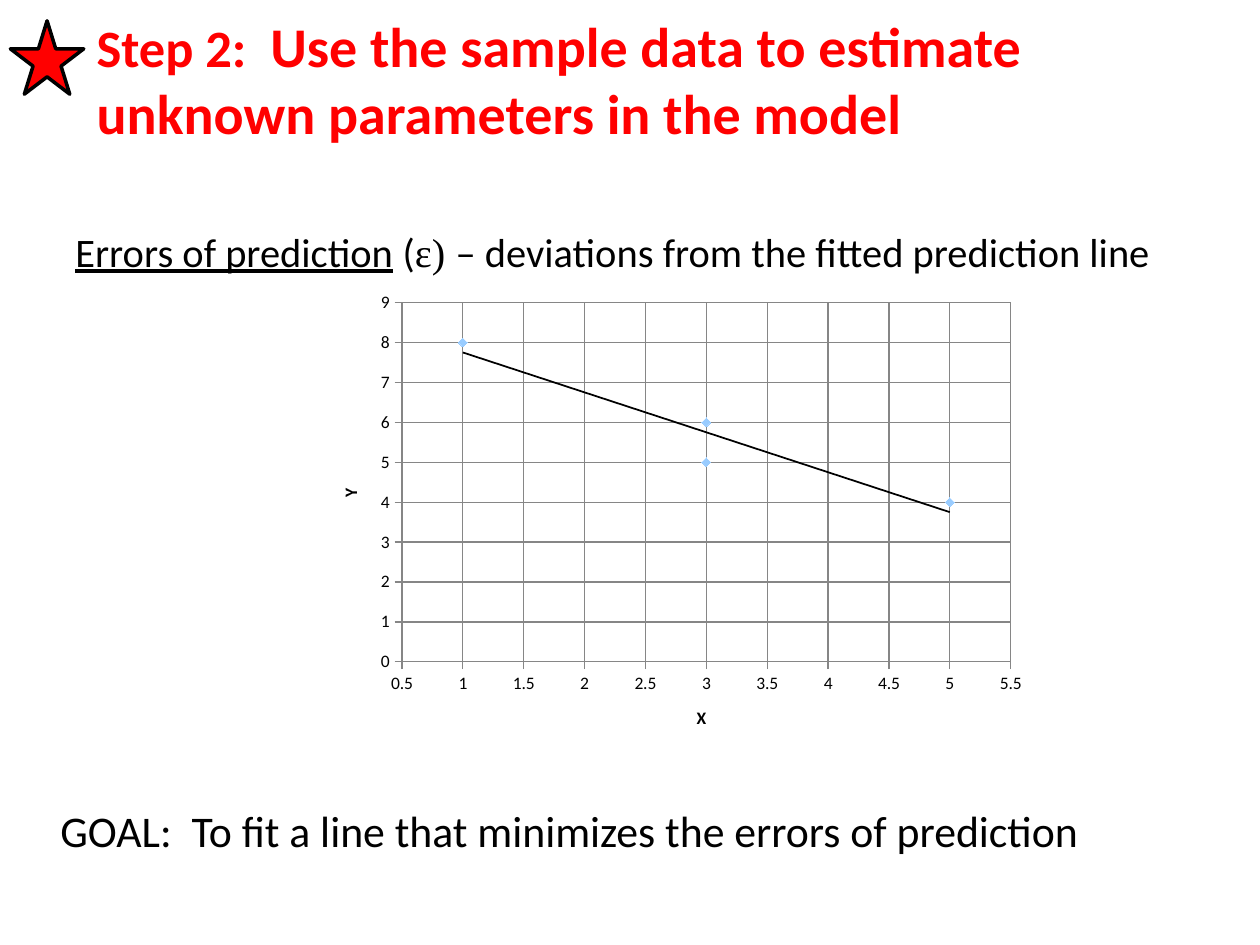
from lxml import etree
from pptx import Presentation
from pptx.chart.data import XyChartData
from pptx.dml.color import RGBColor
from pptx.enum import chart as ch, shapes, text
from pptx.oxml import parse_xml
from pptx.oxml.ns import nsdecls, qn
from pptx.util import Cm, Pt

RED = RGBColor(0xFF, 0, 0)
BLACK = RGBColor(0, 0, 0)
GRID_GREY = RGBColor(0x86, 0x86, 0x86)
POINT_BLUE = RGBColor(0x99, 0xCC, 0xFF)
FONT = "Calibri"
POINTS = [(3, 5), (1, 8), (3, 6), (5, 4)]


def style_font(font, size, color=BLACK, bold=False, name=FONT):
    font.name, font.size, font.bold = name, Pt(size), bold
    font.color.rgb = color


def add_text(slide, box, pieces, anchor=text.MSO_ANCHOR.TOP):
    """Add one paragraph; each piece is (wording, font options)."""
    frame = slide.shapes.add_textbox(*map(Cm, box)).text_frame
    frame.word_wrap = True
    frame.vertical_anchor = anchor
    paragraph = frame.paragraphs[0]
    for wording, options in pieces:
        run = paragraph.add_run()
        run.text = wording
        style_font(run.font, **options)
    return paragraph


def add_star(slide):
    star = slide.shapes.add_shape(shapes.MSO_SHAPE.STAR_5_POINT,
                                  Cm(0.21), Cm(0.42), Cm(1.48), Cm(1.48))
    star.shadow.inherit = False
    star.fill.solid()
    star.fill.fore_color.rgb = RED
    star.line.color.rgb = BLACK
    star.line.width = Pt(2)


def style_axis(axis, title, low, high, step):
    axis.minimum_scale, axis.maximum_scale, axis.major_unit = low, high, step
    axis.has_major_gridlines = True
    axis.major_tick_mark = ch.XL_TICK_MARK.CROSS
    axis.tick_labels.number_format = "General"
    axis.tick_labels.number_format_is_linked = False
    for line in (axis.major_gridlines.format.line, axis.format.line):
        line.color.rgb = GRID_GREY
        line.width = Pt(0.75)
    axis.axis_title.text_frame.text = title
    style_font(axis.axis_title.text_frame.paragraphs[0].runs[0].font, 10, bold=True)


def add_trend_line(series):
    trend = parse_xml(
        f'<c:trendline {nsdecls("c", "a")}><c:spPr><a:ln w="12700"><a:solidFill>'
        f'<a:srgbClr val="{BLACK}"/></a:solidFill></a:ln></c:spPr>'
        '<c:trendlineType val="linear"/><c:dispRSqr val="0"/><c:dispEq val="0"/>'
        '</c:trendline>')
    series._element.find(qn("c:xVal")).addprevious(trend)


def place_plot(chart, **fractions):
    """Fix the inner plot area as fractions of the chart frame."""
    plot_area = chart._chartSpace.chart.plotArea
    for old in plot_area.findall(qn("c:layout")):
        plot_area.remove(old)
    layout = etree.Element(qn("c:layout"))
    manual = etree.SubElement(layout, qn("c:manualLayout"))
    settings = {"layoutTarget": "inner", "xMode": "edge", "yMode": "edge", **fractions}
    for tag, value in settings.items():
        etree.SubElement(manual, qn(f"c:{tag}")).set("val", str(value))
    plot_area.insert(0, layout)


def add_scatter(slide):
    data = XyChartData()
    observations = data.add_series("Series 1")
    for x, y in POINTS:
        observations.add_data_point(x, y)
    chart = slide.shapes.add_chart(ch.XL_CHART_TYPE.XY_SCATTER, Cm(6.35), Cm(5.72),
                                   Cm(14.61), Cm(9.53), data).chart
    chart.has_legend = chart.has_title = False
    style_font(chart.font, 10)
    chart.plots[0].vary_by_categories = False
    style_axis(chart.category_axis, "X", 0.5, 5.5, 0.5)
    style_axis(chart.value_axis, "Y", 0, 9, 1)

    series = chart.plots[0].series[0]
    series.smooth = False
    series.format.line.fill.background()
    series.marker.style = ch.XL_MARKER_STYLE.DIAMOND
    series.marker.size = 5
    series.marker.format.fill.solid()
    series.marker.format.fill.fore_color.rgb = POINT_BLUE
    series.marker.format.line.color.rgb = POINT_BLUE
    add_trend_line(series)
    place_plot(chart, x=0.12, y=0.04, w=0.84, h=0.76)


def main():
    deck = Presentation()
    deck.slide_width, deck.slide_height = Cm(25.4), Cm(19.05)
    slide = deck.slides.add_slide(deck.slide_layouts[6])

    # Heading with its star
    heading = {"color": RED, "bold": True}
    add_text(slide, (1.7, 0, 22.86, 3.18), [
        ("Step 2:  ", {"size": 30, **heading}),
        ("Use the sample data to estimate unknown parameters in the model",
         {"size": 32, **heading}),
    ], text.MSO_ANCHOR.MIDDLE)
    add_star(slide)

    # Definition of the errors
    body = {"size": 23.1}
    definition = add_text(slide, (1.27, 4.45, 22.86, 2.11), [
        ("Errors of prediction", body),
        (" (", body),
        ("ε) ", {"name": "Times New Roman", **body}),
        ("– deviations from the fitted prediction line", body),
    ])
    definition.space_before = Pt(4.6)
    definition.runs[0].font.underline = True

    # Goal and fitted line
    add_text(slide, (0.97, 16.08, 21.89, 1.32), [
        ("GOAL:  To fit a line that minimizes the errors of prediction", {"size": 25}),
    ])
    add_scatter(slide)

    deck.save("out.pptx")


if __name__ == "__main__":
    main()
